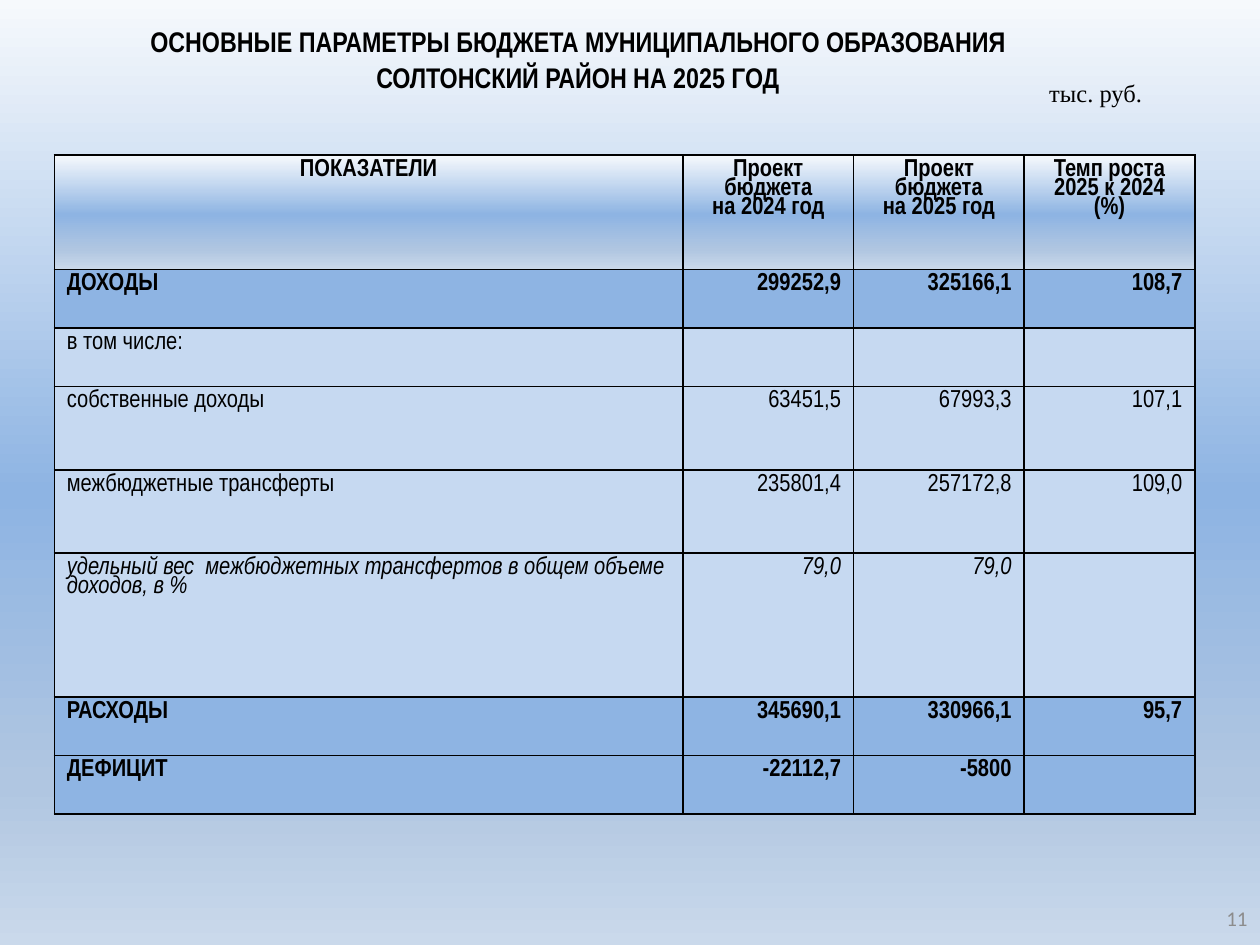
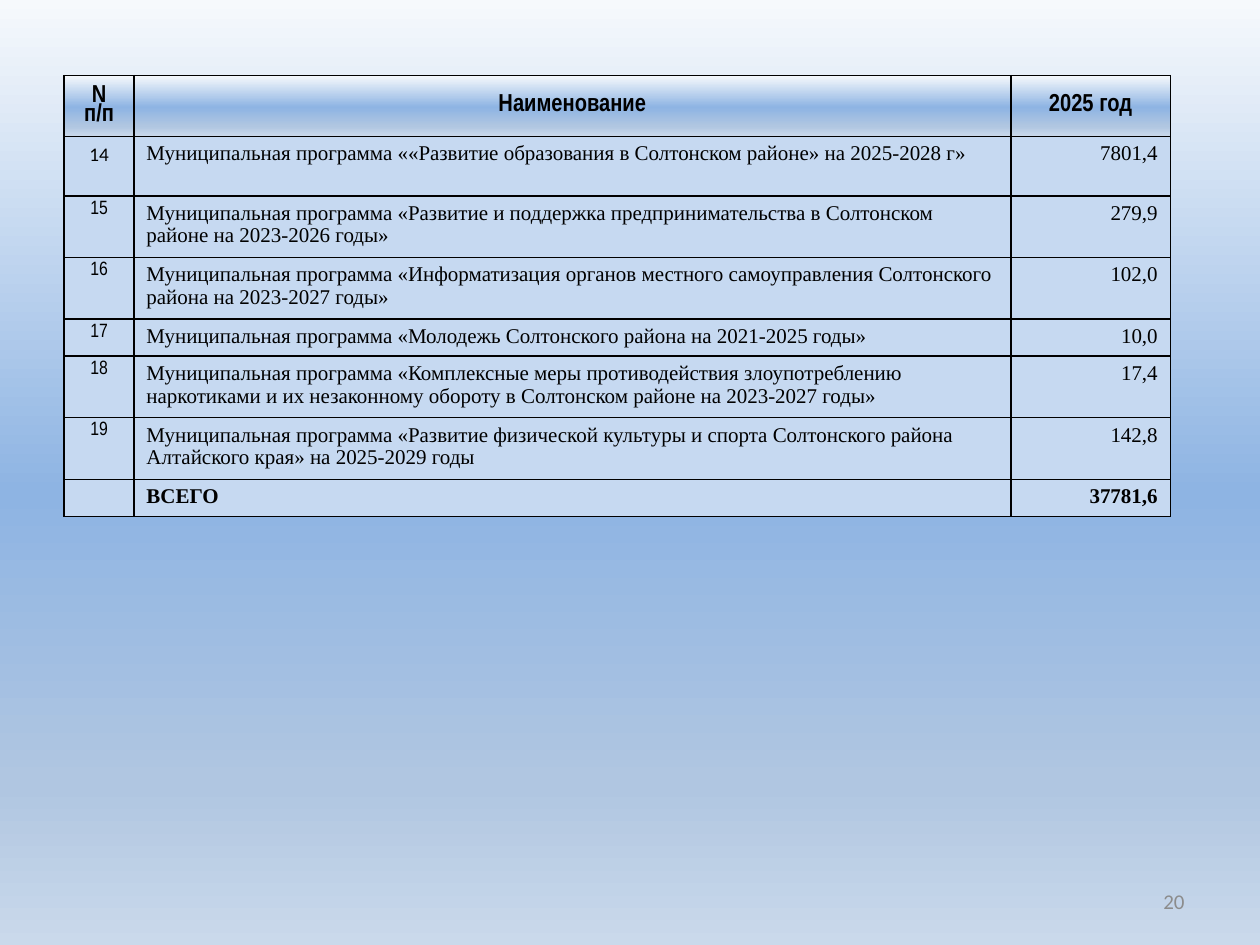
from lxml import etree
from pptx import Presentation
from pptx.dml.color import RGBColor
from pptx.enum import text as t
from pptx.oxml.ns import qn
from pptx.util import Pt

BLACK, GREY = "000000", "8C8C8C"
STRONG, PALE = "8EB4E3", "C6D9F1"
GRADIENT = [(0, "F6F9FC"), (52, STRONG), (83, "B0C6E1"), (100, "CAD9EB")]
NARROW, SERIF, SANS = "Arial Narrow", "Times New Roman", "Calibri"
LEFT, CENTER, RIGHT = t.PP_ALIGN.LEFT, t.PP_ALIGN.CENTER, t.PP_ALIGN.RIGHT
TOP, MIDDLE = t.MSO_ANCHOR.TOP, t.MSO_ANCHOR.MIDDLE

HEADING = dict(name=NARROW, size=14, bold=True, align=CENTER, spacing=0.82)
PLAIN = dict(HEADING, bold=False, align=LEFT)
BOLD = dict(PLAIN, bold=True)
ITALIC = dict(PLAIN, italic=True)
PROGRAM = dict(name=SERIF, size=12, align=LEFT, spacing=0.97)
NUMBER = dict(name=NARROW, size=11, align=CENTER, spacing=0.82)
FIRST_NUMBER = dict(NUMBER, name=SANS, spacing=1.0)
TITLE = dict(name=NARROW, size=16.2, bold=True, align=CENTER, spacing=1.05)
UNIT = dict(name=SERIF, size=14, align=LEFT, spacing=1.0)
PAGE = dict(name=SANS, size=12, align=RIGHT, spacing=1.0, color=GREY)

BUDGET_HEADINGS = ["ПОКАЗАТЕЛИ", "Проект бюджета\nна 2024 год",
                   "Проект бюджета\nна 2025 год", "Темп роста 2025 к 2024\n(%)"]
BUDGET = [
    (33.5, BOLD, STRONG, ["ДОХОДЫ", "299252,9", "325166,1", "108,7"]),
    (33.5, PLAIN, PALE, ["в том числе:", "", "", ""]),
    (47.6, PLAIN, PALE, ["собственные доходы", "63451,5", "67993,3", "107,1"]),
    (47.6, PLAIN, PALE, ["межбюджетные трансферты", "235801,4", "257172,8", "109,0"]),
    (82.2, ITALIC, PALE, ["удельный вес  межбюджетных трансфертов в общем объеме доходов, в %",
                          "79,0", "79,0", ""]),
    (33.5, BOLD, STRONG, ["РАСХОДЫ", "345690,1", "330966,1", "95,7"]),
    (33.5, BOLD, STRONG, ["ДЕФИЦИТ", "-22112,7", "-5800", ""]),
]
PROGRAM_HEADINGS = ["N п/п", "Наименование", "2025 год"]
PROGRAMS = [
    (34, "«Развитие образования в Солтонском районе» на 2025-2028 г", "7801,4"),
    (34, "Развитие и поддержка предпринимательства в Солтонском районе на 2023-2026 годы", "279,9"),
    (34, "Информатизация органов местного самоуправления Солтонского района на 2023-2027 годы", "102,0"),
    (20.5, "Молодежь Солтонского района на 2021-2025 годы", "10,0"),
    (34, "Комплексные меры противодействия злоупотреблению наркотиками и их незаконному "
         "обороту в Солтонском районе на 2023-2027 годы", "17,4"),
    (34, "Развитие физической культуры и спорта Солтонского района Алтайского края» "
         "на 2025-2029 годы", "142,8"),
]
FIRST_PROGRAM = 14


def rgb(value):
    return RGBColor.from_string(value)


def paint_gradient(fill, holder):
    fill.gradient()
    fill.gradient_angle = 270
    stops = next(holder.iter(qn("a:gsLst")))
    for stop in list(stops):
        stops.remove(stop)
    for position, color in GRADIENT:
        stop = etree.SubElement(stops, qn("a:gs"), pos=str(position * 1000))
        etree.SubElement(stop, qn("a:srgbClr"), val=color)


def write(frame, content, style):
    for index, line in enumerate(content.split("\n")):
        paragraph = frame.add_paragraph() if index else frame.paragraphs[0]
        for key, value in dict(alignment=style["align"], line_spacing=style["spacing"],
                               space_before=Pt(0)).items():
            setattr(paragraph, key, value)
        if not line:
            etree.SubElement(paragraph._p, qn("a:endParaRPr"), sz=str(int(style["size"] * 100)))
            continue
        run = paragraph.add_run()
        run.text = line
        look = dict(name=style["name"], size=Pt(style["size"]),
                    bold=style.get("bold", False), italic=style.get("italic", False))
        for key, value in look.items():
            setattr(run.font, key, value)
        run.font.color.rgb = rgb(style.get("color", BLACK))


def draw_borders(cell):
    properties = cell._tc.get_or_add_tcPr()
    for index, side in enumerate(("lnL", "lnR", "lnT", "lnB")):
        line = etree.Element(qn(f"a:{side}"), w=str(Pt(1)))
        paint = etree.SubElement(line, qn("a:solidFill"))
        etree.SubElement(paint, qn("a:srgbClr"), val=BLACK)
        properties.insert(index, line)


def fill_cell(cell, content, style, color=None, anchor=TOP):
    write(cell.text_frame, content, style)
    cell.vertical_anchor = anchor
    if color:
        cell.fill.solid()
        cell.fill.fore_color.rgb = rgb(color)
    else:
        paint_gradient(cell.fill, cell._tc)
    draw_borders(cell)


def add_grid(slide, left, top, widths, heights):
    grid = slide.shapes.add_table(len(heights), len(widths), Pt(left), Pt(top),
                                  Pt(sum(widths)), Pt(sum(heights))).table
    for column, width in zip(grid.columns, widths):
        column.width = Pt(width)
    for row, height in zip(grid.rows, heights):
        row.height = Pt(height)
    return grid


def add_label(slide, box, content, style, anchor=TOP):
    frame = slide.shapes.add_textbox(*map(Pt, box)).text_frame
    frame.word_wrap = True
    frame.vertical_anchor = anchor
    write(frame, content, style)


def add_page_number(slide, left, top, number):
    add_label(slide, (left, top, 168, 28.75), number, PAGE, MIDDLE)


def place_title(slide, box, content):
    title = slide.shapes.title
    for key, value in zip(("left", "top", "width", "height"), box):
        setattr(title, key, Pt(value))
    frame = title.text_frame
    for key, value in dict(word_wrap=True, vertical_anchor=TOP,
                           auto_size=t.MSO_AUTO_SIZE.NONE).items():
        setattr(frame, key, value)
    write(frame, content, TITLE)
    frame.paragraphs[0]._p.get_or_add_pPr().set("marR", str(Pt(59)))


def budget_table(slide, left, top):
    heights = [65.3] + [height for height, *_ in BUDGET]
    grid = add_grid(slide, left, top, [359.3] + [97.5] * 3, heights)
    for column, heading in enumerate(BUDGET_HEADINGS):
        fill_cell(grid.cell(0, column), heading, HEADING)
    for row, (_, style, color, values) in enumerate(BUDGET, 1):
        for column, value in enumerate(values):
            aligned = dict(style, align=RIGHT if column else LEFT)
            fill_cell(grid.cell(row, column), value, aligned, color)


def program_table(slide, left, top):
    heights = [34] + [height for height, *_ in PROGRAMS] + [21]
    grid = add_grid(slide, left, top, [39.8, 501.1, 91.2], heights)
    for column, heading in enumerate(PROGRAM_HEADINGS):
        fill_cell(grid.cell(0, column), heading, HEADING, anchor=MIDDLE)
    rows = [(str(number), f"Муниципальная программа «{name}»" if not name.endswith("2029 годы")
             else f"Муниципальная программа «{name}", amount)
            for number, (_, name, amount) in enumerate(PROGRAMS, FIRST_PROGRAM)]
    rows.append(("", "ВСЕГО", "37781,6"))
    for row, (number, name, amount) in enumerate(rows, 1):
        style = dict(PROGRAM, bold=not number)
        fill_cell(grid.cell(row, 0), number, FIRST_NUMBER if row == 1 else NUMBER, PALE)
        fill_cell(grid.cell(row, 1), name, style, PALE)
        fill_cell(grid.cell(row, 2), amount, dict(style, align=RIGHT), PALE)


def budget_slide(deck):
    slide = deck.slides.add_slide(deck.slide_layouts[5])
    place_title(slide, (31, 9.4, 657.4, 45.4),
                "ОСНОВНЫЕ ПАРАМЕТРЫ БЮДЖЕТА МУНИЦИПАЛЬНОГО ОБРАЗОВАНИЯ\n"
                "СОЛТОНСКИЙ РАЙОН НА 2025 ГОД")
    budget_table(slide, 31, 88.6)
    add_label(slide, (592.5, 41, 72, 24.5), "тыс. руб.", UNIT)
    add_page_number(slide, 552, 510, "11")


def program_slide(deck):
    slide = deck.slides.add_slide(deck.slide_layouts[6])
    add_page_number(slide, 516, 500.5, "20")
    program_table(slide, 36.7, 43.2)


def main():
    deck = Presentation()
    deck.slide_width, deck.slide_height = Pt(720), Pt(540)
    paint_gradient(deck.slide_master.background.fill, deck.slide_master.element)
    budget_slide(deck)
    program_slide(deck)
    deck.save("out.pptx")


if __name__ == "__main__":
    main()
